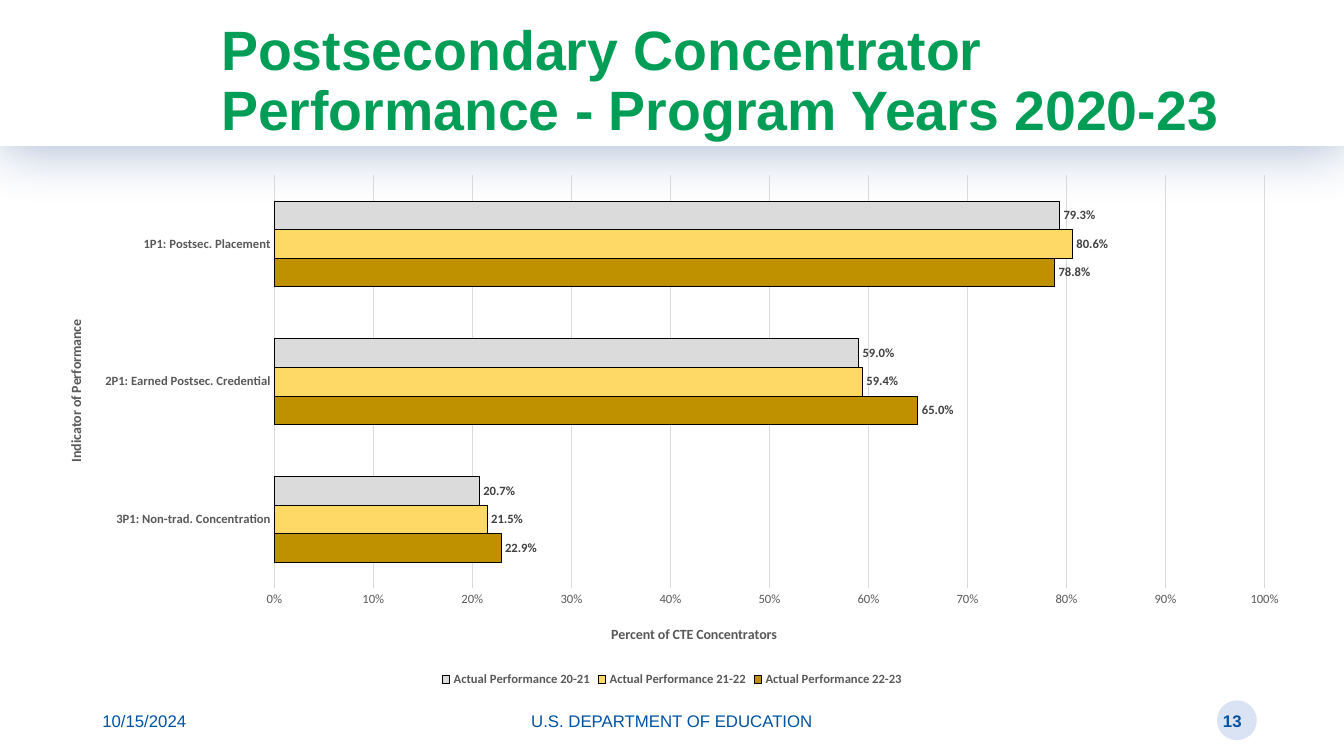
from lxml import etree
from pptx import Presentation
from pptx.chart.data import CategoryChartData
from pptx.dml.color import RGBColor
from pptx.enum.chart import XL_CHART_TYPE, XL_LABEL_POSITION, XL_LEGEND_POSITION, XL_TICK_MARK
from pptx.enum.shapes import MSO_SHAPE
from pptx.enum.text import MSO_ANCHOR, MSO_AUTO_SIZE, PP_ALIGN
from pptx.oxml import parse_xml
from pptx.oxml.ns import nsdecls, qn
from pptx.util import Pt

PX = 9525
LEFT, CENTER, RIGHT = PP_ALIGN.LEFT, PP_ALIGN.CENTER, PP_ALIGN.RIGHT
MIDDLE, NO_FIT = MSO_ANCHOR.MIDDLE, MSO_AUTO_SIZE.NONE
RECT, OVAL = MSO_SHAPE.RECTANGLE, MSO_SHAPE.OVAL
BAR, OUTSIDE = XL_CHART_TYPE.BAR_CLUSTERED, XL_LABEL_POSITION.OUTSIDE_END
BOTTOM, NO_TICK = XL_LEGEND_POSITION.BOTTOM, XL_TICK_MARK.NONE

WHITE = RGBColor(0xFF, 0xFF, 0xFF)
BLACK = RGBColor(0, 0, 0)
GREEN = RGBColor(0x00, 0x9D, 0x56)
BLUE = RGBColor(0x00, 0x52, 0xA2)
PALE_BLUE = RGBColor(0xDA, 0xE3, 0xF3)
GRID = RGBColor(0xD9, 0xD9, 0xD9)
GRAY = RGBColor(0x59, 0x59, 0x59)
DARK_GRAY = RGBColor(0x40, 0x40, 0x40)

CATEGORIES = ["3P1: Non-trad. Concentration", "2P1: Earned Postsec. Credential",
              "1P1: Postsec. Placement"]
SERIES = [
    ("Actual Performance 22-23", (0.229, 0.65, 0.788), RGBColor(0xBF, 0x90, 0x00)),
    ("Actual Performance 21-22", (0.215, 0.594, 0.806), RGBColor(0xFF, 0xD9, 0x66)),
    ("Actual Performance 20-21", (0.207, 0.59, 0.793), RGBColor(0xDB, 0xDB, 0xDB)),
]


def px(*lengths):
    """Turn px lengths into EMU."""
    return [n * PX for n in lengths]


def set_font(font, size, color, bold=False, name="Calibri"):
    """Format a font."""
    font.name, font.size, font.bold = name, Pt(size), bold
    font.color.rgb = color


def set_text(tf, text, size=12, color=BLUE, bold=False, name="Arial", align=LEFT):
    """Write one formatted paragraph into a text frame."""
    p = tf.paragraphs[0]
    p.alignment = align
    r = p.add_run()
    r.text = text
    set_font(r.font, size, color, bold, name)
    return p


def add_text(slide, text, box, **fmt):
    """Add a wrapped text box with middle anchoring."""
    tf = slide.shapes.add_textbox(*px(*box)).text_frame
    tf.word_wrap = True
    tf.vertical_anchor = MIDDLE
    set_text(tf, text, **fmt)


def add_shape(slide, kind, box, fill):
    """Add a filled shape without an outline or shadow."""
    sp = slide.shapes.add_shape(kind, *px(*box))
    sp.shadow.inherit = False
    sp.fill.solid()
    sp.fill.fore_color.rgb = fill
    sp.line.fill.background()
    return sp


def add_header_shadow(sp):
    """Give the header band a soft blue shadow below it."""
    effects = sp.element.spPr.find(qn("a:effectLst"))
    effects.append(parse_xml(
        f'<a:outerShdw {nsdecls("a")} blurRad="{Pt(38)}" dist="{Pt(3)}" dir="5400000" '
        'algn="t" rotWithShape="0"><a:srgbClr val="2F5597"><a:alpha val="40000"/>'
        '</a:srgbClr></a:outerShdw>'))


def add_title(slide, text, box):
    """Place and format the title in front of the header band."""
    sp = slide.shapes.title
    sp.left, sp.top, sp.width, sp.height = px(*box)
    tf = sp.text_frame
    tf.word_wrap, tf.auto_size, tf.vertical_anchor = True, NO_FIT, MIDDLE
    p = set_text(tf, text, size=39.6, color=GREEN, bold=True)
    p.line_spacing = 0.9
    sp.element.getparent().append(sp.element)


def set_layout(parent, **values):
    """Set the manual layout of a chart part as fractions of the chart."""
    layout = parent.find(qn("c:layout"))
    if layout is None:
        layout = etree.Element(qn("c:layout"))
        parent.insert(0, layout)
    manual = etree.SubElement(layout, qn("c:manualLayout"))
    for tag, value in values.items():
        etree.SubElement(manual, qn(f"c:{tag}")).set("val", str(value))


def format_axis(axis, title, x, y, rotation=0, bold=False):
    """Format an axis with its tick labels and title."""
    axis.major_tick_mark = axis.minor_tick_mark = NO_TICK
    set_font(axis.tick_labels.font, 9, GRAY, bold)
    axis_title = axis.axis_title
    set_text(axis_title.text_frame, title, 10, GRAY, True, "Calibri", CENTER)
    for body in axis_title.element.iter(qn("a:bodyPr")):
        body.set("rot", str(rotation))
        body.set("vert", "horz")
    set_layout(axis_title.element, xMode="edge", yMode="edge", x=x, y=y)


def format_series(series, color):
    """Colour the bars of a series and label their values."""
    series.format.fill.solid()
    series.format.fill.fore_color.rgb = color
    series.format.line.color.rgb = BLACK
    series.format.line.width = Pt(0.75)
    labels = series.data_labels
    labels.show_value = True
    labels.position = OUTSIDE
    labels.number_format, labels.number_format_is_linked = "0.0%", False
    set_font(labels.font, 9, DARK_GRAY, True)


def add_performance_chart(slide, box):
    """Add the clustered bar chart of performance by indicator."""
    data = CategoryChartData(number_format="0.0%")
    data.categories = CATEGORIES
    for name, values, _ in SERIES:
        data.add_series(name, values)
    chart = slide.shapes.add_chart(BAR, *px(*box), data).chart
    chart.has_title = False
    set_font(chart.font, 10, BLACK)

    plot = chart.plots[0]
    plot.gap_width, plot.overlap, plot.vary_by_categories = 182, 0, False
    for series, (_, _, color) in zip(plot.series, SERIES):
        format_series(series, color)

    cat, val = chart.category_axis, chart.value_axis
    format_axis(cat, "Indicator of Performance", 0.02, 0.29, -5400000, bold=True)
    format_axis(val, "Percent of CTE Concentrators", 0.45, 0.87)
    cat.format.line.color.rgb = GRID
    cat.format.line.width = Pt(0.75)
    val.format.line.fill.background()
    val.minimum_scale, val.maximum_scale, val.major_unit = 0, 1, 0.1
    val.tick_labels.number_format = "0%"
    val.tick_labels.number_format_is_linked = False
    val.major_gridlines.format.line.color.rgb = GRID
    val.major_gridlines.format.line.width = Pt(0.75)

    chart.has_legend = True
    chart.legend.position = BOTTOM
    chart.legend.include_in_layout = False
    set_font(chart.legend.font, 9, GRAY, True)
    plot_area = next(chart.element.iter(qn("c:plotArea")))
    set_layout(plot_area, layoutTarget="inner", xMode="edge", yMode="edge",
               x=0.186, y=0.02, w=0.782, h=0.785)


def main():
    """Build the performance slide."""
    prs = Presentation()
    prs.slide_width, prs.slide_height = px(1280, 720)
    slide = prs.slides.add_slide(prs.slide_layouts[5])
    add_shape(slide, OVAL, (1159, 667, 38, 38), PALE_BLUE)
    add_header_shadow(add_shape(slide, RECT, (0, 0, 1280, 139), WHITE))
    add_text(slide, "10/15/2024", (88, 667, 288, 38))
    add_text(slide, "U.S. DEPARTMENT OF EDUCATION", (424, 667, 432, 38), align=CENTER)
    add_text(slide, "13", (904, 667, 288, 38), bold=True, align=RIGHT)
    add_title(slide, "Postsecondary Concentrator Performance - Program Years 2020-23",
              (201, 38, 992, 82))
    add_performance_chart(slide, (37, 157, 1206, 501))
    prs.save("out.pptx")


if __name__ == "__main__":
    main()
